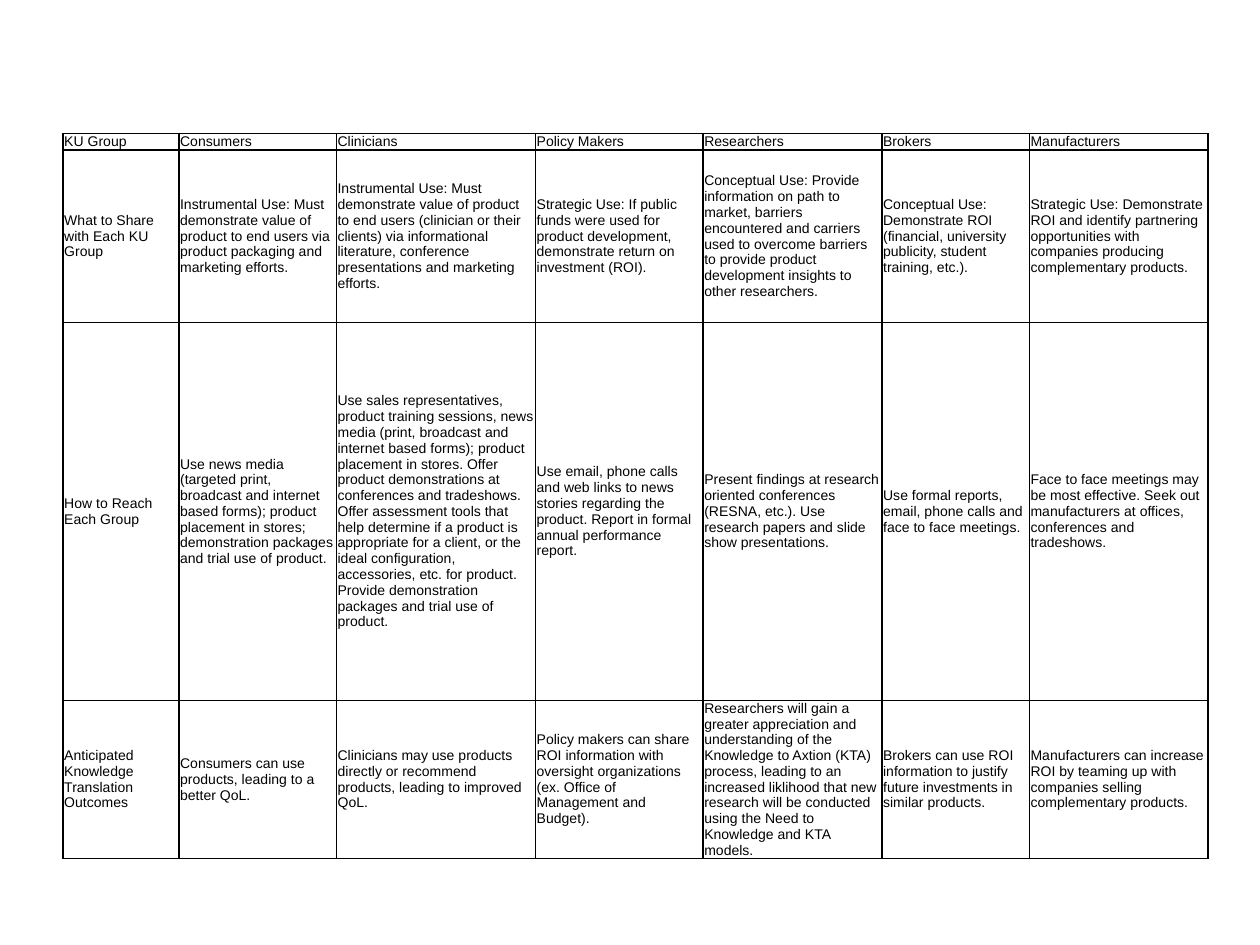
from dataclasses import dataclass
from typing import Any

from lxml.etree import SubElement
from pptx import Presentation
from pptx.dml.color import RGBColor
from pptx.enum.text import MSO_ANCHOR
from pptx.oxml.ns import qn
from pptx.util import Inches, Pt

COLUMN_WIDTHS = [0.92, 1.25, 1.58, 1.33, 1.42, 1.17, 1.42]
ROW_HEIGHTS = [0.13, 1.37, 3, 1.22]
KNOWLEDGE_USERS = [
    ["KU Group", "Consumers", "Clinicians", "Policy Makers", "Researchers", "Brokers", "Manufacturers"],
    [
        "What to Share with Each KU Group",
        "Instrumental Use: Must demonstrate value of product to end users via product packaging "
        "and marketing efforts.",
        "Instrumental Use: Must demonstrate value of product to end users (clinician or their clients) "
        "via informational literature, conference presentations and marketing efforts.",
        "Strategic Use: If public funds were used for product development, demonstrate return on "
        "investment (ROI).",
        "Conceptual Use: Provide information on path to market, barriers encountered and carriers used "
        "to overcome barriers to provide product development insights to other researchers.",
        "Conceptual Use: Demonstrate ROI (financial, university publicity, student training, etc.).",
        "Strategic Use: Demonstrate ROI and identify partnering opportunities with companies producing "
        "complementary products.",
    ],
    [
        "How to Reach Each Group",
        "Use news media (targeted print, broadcast and internet based forms); product placement in "
        "stores; demonstration packages and trial use of product.",
        "Use sales representatives, product training sessions, news media (print, broadcast and internet "
        "based forms); product placement in stores. Offer product demonstrations at conferences and "
        "tradeshows. Offer assessment tools that help determine if a product is appropriate for a client, "
        "or the ideal configuration, accessories, etc. for product. Provide demonstration packages and "
        "trial use of product.",
        "Use email, phone calls and web links to news stories regarding the product. Report in formal "
        "annual performance report.",
        "Present findings at research oriented conferences (RESNA, etc.). Use research papers and "
        "slide show presentations.",
        "Use formal reports, email, phone calls and face to face meetings.",
        "Face to face meetings may be most effective. Seek out manufacturers at offices, conferences "
        "and tradeshows.",
    ],
    [
        "Anticipated Knowledge Translation Outcomes",
        "Consumers can use products, leading to a better QoL.",
        "Clinicians may use products directly or recommend products, leading to improved QoL.",
        "Policy makers can share ROI information with oversight organizations (ex. Office of Management "
        "and Budget).",
        "Researchers will gain a greater appreciation and understanding of the Knowledge to Axtion (KTA) "
        "process, leading to an increased liklihood that new research will be conducted using the Need "
        "to Knowledge and KTA models.",
        "Brokers can use ROI information to justify future investments in similar products.",
        "Manufacturers can increase ROI by teaming up with companies selling complementary products.",
    ],
]


def color(value):
    return RGBColor.from_string(value)


def write(para, text, font="Arial", size=8, ink="000000"):
    span = para.add_run()
    span.text = text
    span.font.name = font
    span.font.size = Pt(size)
    span.font.color.rgb = color(ink)


@dataclass
class PageBuilder:
    page: Any
    font: str = "Arial"
    size: float = 8
    ink: str = "000000"
    border_width: float = 1

    def background(self, value):
        fill = self.page.background.fill
        fill.solid()
        fill.fore_color.rgb = color(value)

    def borders(self, cell):
        properties = cell._tc.get_or_add_tcPr()
        for side in ("lnL", "lnR", "lnT", "lnB"):
            line = SubElement(properties, qn(f"a:{side}"), w=str(Pt(self.border_width)))
            fill = SubElement(line, qn("a:solidFill"))
            SubElement(fill, qn("a:srgbClr"), val=self.ink)

    def cell(self, cell, text):
        cell.margin_left = cell.margin_right = Inches(0.01)
        cell.margin_top = cell.margin_bottom = 0
        cell.vertical_anchor = MSO_ANCHOR.MIDDLE
        self.borders(cell)
        cell.fill.background()
        write(cell.text_frame.paragraphs[0], text, font=self.font, size=self.size, ink=self.ink)

    def table(self, left, top, widths, heights, rows):
        frame = self.page.shapes.add_table(
            len(heights), len(widths), Inches(left), Inches(top),
            Inches(sum(widths)), Inches(sum(heights)),
        )
        table = frame.table
        table.first_row = table.horz_banding = False
        for column, width in zip(table.columns, widths):
            column.width = Inches(width)
        for row, height, texts in zip(table.rows, heights, rows):
            row.height = Inches(height)
            for cell, text in zip(row.cells, texts):
                self.cell(cell, text)


def main():
    deck = Presentation()
    deck.slide_width, deck.slide_height = Inches(10), Inches(7.5)
    builder = PageBuilder(deck.slides.add_slide(deck.slide_layouts[6]))
    builder.background("FFFFFF")
    builder.table(0.5, 1.06, COLUMN_WIDTHS, ROW_HEIGHTS, KNOWLEDGE_USERS)
    deck.save("out.pptx")


if __name__ == "__main__":
    main()
